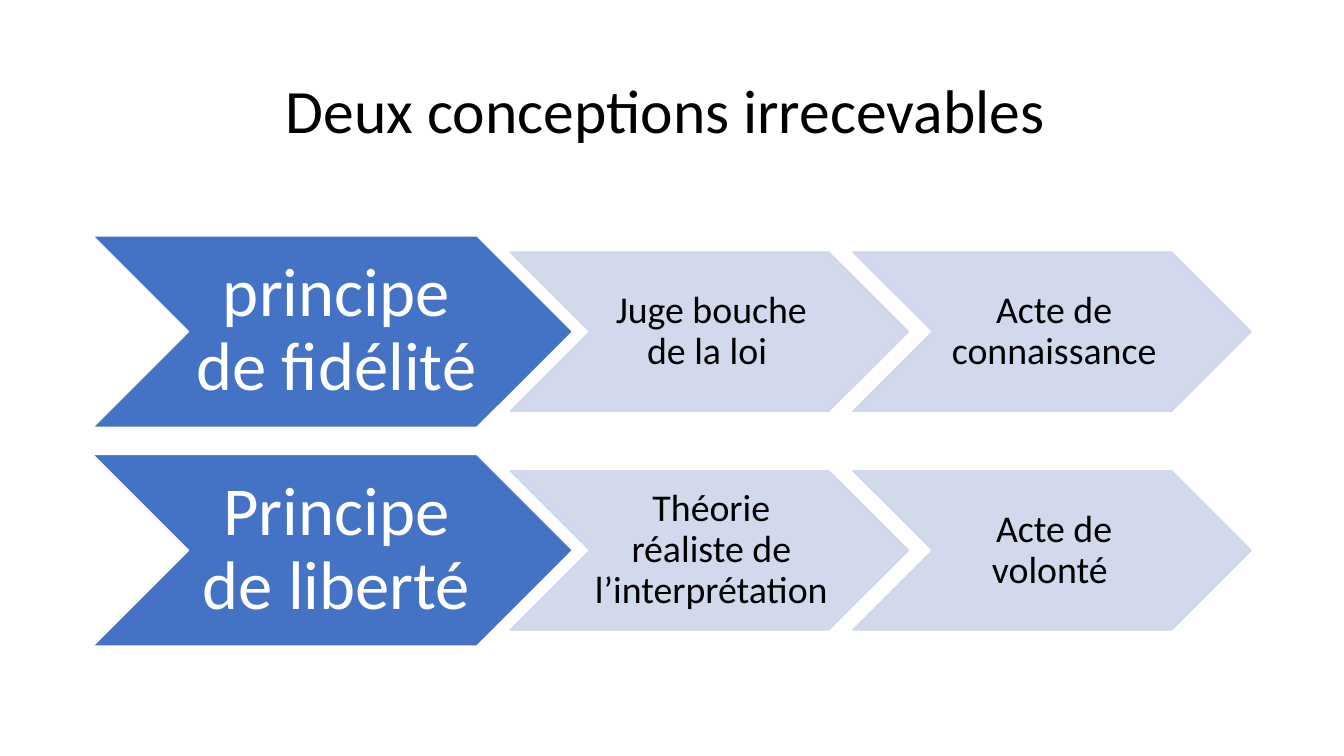
from pptx import Presentation, util as u
from pptx.dml import color
from pptx.enum import shapes, text
from pptx.oxml import ns


def rgb(code):
    """Turn a hex string into a colour."""
    return color.RGBColor.from_string(code)


class ConceptSlide:
    """Hold the style and the current slide."""

    font = "Calibri"
    main = {"fill": "4472C4", "line": "FFFFFF", "ink": "FFFFFF", "alpha": 100,
            "size": 49, "insets": (0.07, 0.03, 0, 0.03)}
    step = {"fill": "CFD5EA", "line": "CFD5EA", "ink": "000000", "alpha": 90,
            "size": 27, "insets": (0.04, 0.02, 0, 0.02)}

    def __init__(self, deck):
        """Add a blank slide to the deck."""
        self.slide = deck.slides.add_slide(deck.slide_layouts[6])

    def set_wording(self, frame, wording, size, ink, insets):
        """Put one centred paragraph in a text frame."""
        left, top, right, bottom = map(u.Inches, insets)
        frame_format = {"word_wrap": True, "vertical_anchor": text.MSO_ANCHOR.MIDDLE,
                        "margin_left": left, "margin_top": top,
                        "margin_right": right, "margin_bottom": bottom}
        paragraph = frame.paragraphs[0]
        run = paragraph.add_run()
        run.text = wording
        paragraph_format = {"alignment": text.PP_ALIGN.CENTER, "line_spacing": 0.9}
        font_format = {"name": self.font, "size": u.Pt(size)}
        for target, values in ((frame, frame_format), (paragraph, paragraph_format),
                               (run.font, font_format)):
            for key, value in values.items():
                setattr(target, key, value)
        run.font.color.rgb = rgb(ink)

    def title(self, wording, box):
        """Add the slide title."""
        heading = self.slide.shapes.add_textbox(*map(u.Inches, box))
        self.set_wording(heading.text_frame, wording, 44, "000000", (0.1, 0.05, 0.1, 0.05))

    def chevron(self, wording, box, style):
        """Add a chevron with its wording."""
        arrow = self.slide.shapes.add_shape(shapes.MSO_SHAPE.CHEVRON, *map(u.Inches, box))
        arrow.shadow.inherit = False
        arrow.line.width = u.Pt(1)
        for paint, code in ((arrow.fill, style["fill"]), (arrow.line.fill, style["line"])):
            paint.solid()
            paint.fore_color.rgb = rgb(code)
        if style["alpha"] < 100:
            for swatch in arrow.element.spPr.iter(ns.qn("a:srgbClr")):
                alpha = swatch.makeelement(ns.qn("a:alpha"),
                                           {"val": str(style["alpha"] * 1000)})
                swatch.append(alpha)
        self.set_wording(arrow.text_frame, wording, style["size"], style["ink"],
                         style["insets"])


def main():
    """Build and save the deck."""
    deck = Presentation()
    deck.slide_width, deck.slide_height = u.Inches(13.33), u.Inches(7.5)
    page = ConceptSlide(deck)
    page.title("Deux conceptions irrecevables ", (0.92, 0.4, 11.5, 1.45))
    conceptions = (
        ("principe de fidélité", "Juge bouche de la loi ", "Acte de connaissance"),
        ("Principe de liberté", "Théorie réaliste de l’interprétation ", "Acte de volonté "),
    )
    for row, (principle, *steps) in enumerate(conceptions):
        top = 2.34 + 2.17 * row
        page.chevron(principle, (0.92, top, 4.76, 1.9), page.main)
        for column, wording in enumerate(steps):
            page.chevron(wording, (5.06 + 3.4 * column, top + 0.16, 3.95, 1.58), page.step)
    deck.save("out.pptx")


if __name__ == "__main__":
    main()
